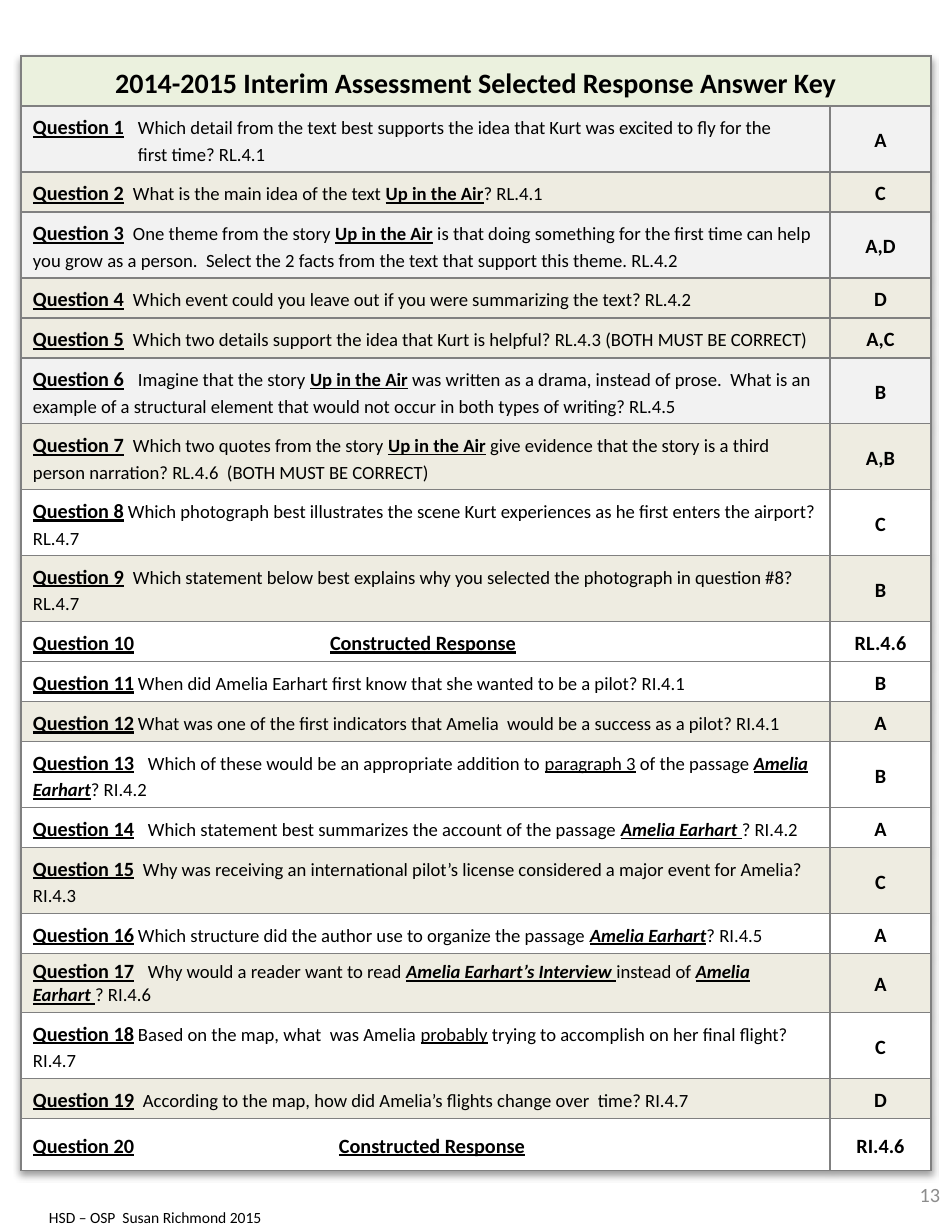
import dataclasses

import lxml.etree
import pptx
import pptx.dml.color
import pptx.enum.text
import pptx.oxml
import pptx.oxml.ns
import pptx.util

PX = 914400 / 112
NS = pptx.oxml.ns.nsdecls("a")
ALIGN = pptx.enum.text.PP_ALIGN
MIDDLE = pptx.enum.text.MSO_ANCHOR.MIDDLE


@dataclasses.dataclass(frozen=True)
class Theme:
    font: str = "Calibri"
    ink: str = "000000"
    muted: str = "8C8C8C"
    border: str = "808080"
    header: str = "EBF1DE"
    gray: str = "F2F2F2"
    tan: str = "EEECE1"
    white: str = "FFFFFF"
    title: int = 18
    label: int = 13
    body: int = 12
    footer: int = 10


T = Theme()
PLAIN = dict(size=T.body)
UNDER = dict(size=T.body, underline=True)
STORY = dict(size=T.body, bold=True, underline=True)
PASSAGE = dict(STORY, italic=True)
LABEL = dict(size=T.label, bold=True, underline=True)
ANSWER = dict(size=T.label, bold=True)


def px(n):
    return pptx.util.Emu(round(n * PX))


def add_text(p, text, size, color=T.ink, bold=False, italic=False, underline=False):
    r = p.add_run()
    r.text = text
    f = r.font
    f.name, f.size = T.font, pptx.util.Pt(size)
    f.bold, f.italic, f.underline = bold, italic, underline
    f.color.rgb = pptx.dml.color.RGBColor.from_string(color)


AIR = ("Up in the Air", STORY)
CONSTRUCTED = [("Constructed Response", LABEL)]

# Row height, fill, answer, start of the wording, then its runs
QUESTIONS = [
    (66, T.gray, "A", 105, [
        ("Which detail from the text best supports the idea that Kurt was excited to fly for the\n", PLAIN),
        ("first time? RL.4.1", PLAIN)]),
    (40, T.tan, "C", 100, [("What is the main idea of the text ", PLAIN), AIR, ("? RL.4.1", PLAIN)]),
    (66, T.gray, "A,D", 100, [
        ("One theme from the story ", PLAIN), AIR,
        (" is that doing something for the first time can help you grow as a person.  "
         "Select the 2 facts from the text that support this theme. RL.4.2", PLAIN)]),
    (40, T.tan, "D", 100, [
        ("Which event could you leave out if you were summarizing the text? RL.4.2", PLAIN)]),
    (40, T.tan, "A,C", 100, [
        ("Which two details support the idea that Kurt is helpful? RL.4.3 (BOTH MUST BE CORRECT)", PLAIN)]),
    (66, T.gray, "B", 105, [
        ("Imagine that the story ", PLAIN), AIR,
        (" was written as a drama, instead of prose.  What is an example of a structural "
         "element that would not occur in both types of writing? RL.4.5", PLAIN)]),
    (66, T.tan, "A,B", 100, [
        ("Which two quotes from the story ", PLAIN), AIR,
        (" give evidence that the story is a third person narration? RL.4.6  (BOTH MUST BE CORRECT)", PLAIN)]),
    (66, T.white, "C", 95, [
        ("Which photograph best illustrates the scene Kurt experiences as he first enters "
         "the airport? RL.4.7", PLAIN)]),
    (66, T.tan, "B", 100, [
        ("Which statement below best explains why you selected the photograph in question #8? RL.4.7", PLAIN)]),
    (40, T.white, "RL.4.6", 297, CONSTRUCTED),
    (40, T.white, "B", 105, [
        ("When did Amelia Earhart first know that she wanted to be a pilot? RI.4.1", PLAIN)]),
    (40, T.tan, "A", 105, [
        ("What was one of the first indicators that Amelia  would be a success as a pilot? RI.4.1", PLAIN)]),
    (66, T.white, "B", 115, [
        ("Which of these would be an appropriate addition to ", PLAIN), ("paragraph 3", UNDER),
        (" of the passage ", PLAIN), ("Amelia Earhart", PASSAGE), ("? RI.4.2", PLAIN)]),
    (40, T.white, "A", 115, [
        ("Which statement best summarizes the account of the passage ", PLAIN),
        ("Amelia Earhart ", PASSAGE), ("? RI.4.2", PLAIN)]),
    (66, T.tan, "C", 110, [
        ("Why was receiving an international pilot’s license considered a major event for Amelia? RI.4.3", PLAIN)]),
    (40, T.white, "A", 105, [
        ("Which structure did the author use to organize the passage ", PLAIN),
        ("Amelia Earhart", PASSAGE), ("? RI.4.5", PLAIN)]),
    (59, T.tan, "A", 115, [
        ("Why would a reader want to read ", PLAIN), ("Amelia Earhart’s Interview ", PASSAGE),
        ("instead of ", PLAIN), ("Amelia\n", PASSAGE), ("Earhart ", PASSAGE), ("? RI.4.6", PLAIN)]),
    (66, T.white, "C", 105, [
        ("Based on the map, what  was Amelia ", PLAIN), ("probably", UNDER),
        (" trying to accomplish on her final flight? RI.4.7", PLAIN)]),
    (40, T.tan, "D", 110, [
        ("According to the map, how did Amelia’s flights change over  time? RI.4.7", PLAIN)]),
    (52, T.white, "RI.4.6", 306, CONSTRUCTED),
]

prs = pptx.Presentation()
prs.slide_width, prs.slide_height = px(952), px(1232)
s = prs.slides.add_slide(prs.slide_layouts[6])

# Footer and page number
for text, box, align, size, color in [
    ("HSD – OSP  Susan Richmond 2015", (37, 1202, 694, 30), ALIGN.LEFT, T.footer, T.ink),
    ("13", (849, 1157, 103, 75), ALIGN.RIGHT, T.label, T.muted),
]:
    tf = s.shapes.add_textbox(*map(px, box)).text_frame
    tf.word_wrap = True
    tf.vertical_anchor = MIDDLE
    tf.margin_left = tf.margin_right = px(12)
    p = tf.paragraphs[0]
    p.alignment = align
    add_text(p, text, size, color)

# Answer key
heights = [50] + [q[0] for q in QUESTIONS]
fills = [T.header] + [q[1] for q in QUESTIONS]
table = s.shapes.add_table(len(heights), 2, px(21), px(56), px(910), px(sum(heights))).table
table.first_row = table.horz_banding = False
table.columns[0].width, table.columns[1].width = px(809), px(101)
table._tbl.tblPr.insert(0, pptx.oxml.parse_xml(
    f'<a:effectLst {NS}><a:outerShdw blurRad="50800" dist="38100" dir="5400000" algn="t" rotWithShape="0">'
    f'<a:srgbClr val="{T.ink}"><a:alpha val="40000"/></a:srgbClr></a:outerShdw></a:effectLst>'))

for row, height, fill in zip(table.rows, heights, fills):
    row.height = px(height)
    for cell in row.cells:
        cell.vertical_anchor = MIDDLE
        cell.margin_left = cell.margin_right = px(12)
        cell.margin_top = cell.margin_bottom = px(5)
        for side in "LRTB":
            cell._tc.get_or_add_tcPr().append(pptx.oxml.parse_xml(
                f'<a:ln{side} {NS} w="12700"><a:solidFill><a:srgbClr val="{T.border}"/></a:solidFill></a:ln{side}>'))
        cell.fill.solid()
        cell.fill.fore_color.rgb = pptx.dml.color.RGBColor.from_string(fill)

table.cell(0, 0).merge(table.cell(0, 1))
p = table.cell(0, 0).text_frame.paragraphs[0]
p.alignment, p.line_spacing = ALIGN.CENTER, 1.15
add_text(p, "2014-2015 Interim Assessment Selected Response Answer Key", T.title, bold=True)

for n, (height, fill, answer, start, runs) in enumerate(QUESTIONS, 1):
    spacing = 1.0 if n == 17 else 1.15
    tf = table.cell(n, 0).text_frame
    p = tf.paragraphs[0]
    p.line_spacing = spacing
    pPr = p._p.get_or_add_pPr()
    tabs = lxml.etree.SubElement(pPr, pptx.oxml.ns.qn("a:tabLst"))
    lxml.etree.SubElement(tabs, pptx.oxml.ns.qn("a:tab"), pos=str(px(start)), algn="l")
    add_text(p, f"Question {n}", **LABEL)
    add_text(p, "\t", T.label)
    for text, style in runs:
        add_text(p, text.rstrip("\n"), **style)
        if text.endswith("\n"):
            p = tf.add_paragraph()
            p.line_spacing = spacing
            if n == 1:
                p._p.get_or_add_pPr().set("marL", str(px(start)))
    p = table.cell(n, 1).text_frame.paragraphs[0]
    p.alignment, p.line_spacing = ALIGN.CENTER, 1.15
    add_text(p, answer, **ANSWER)

prs.save("out.pptx")
